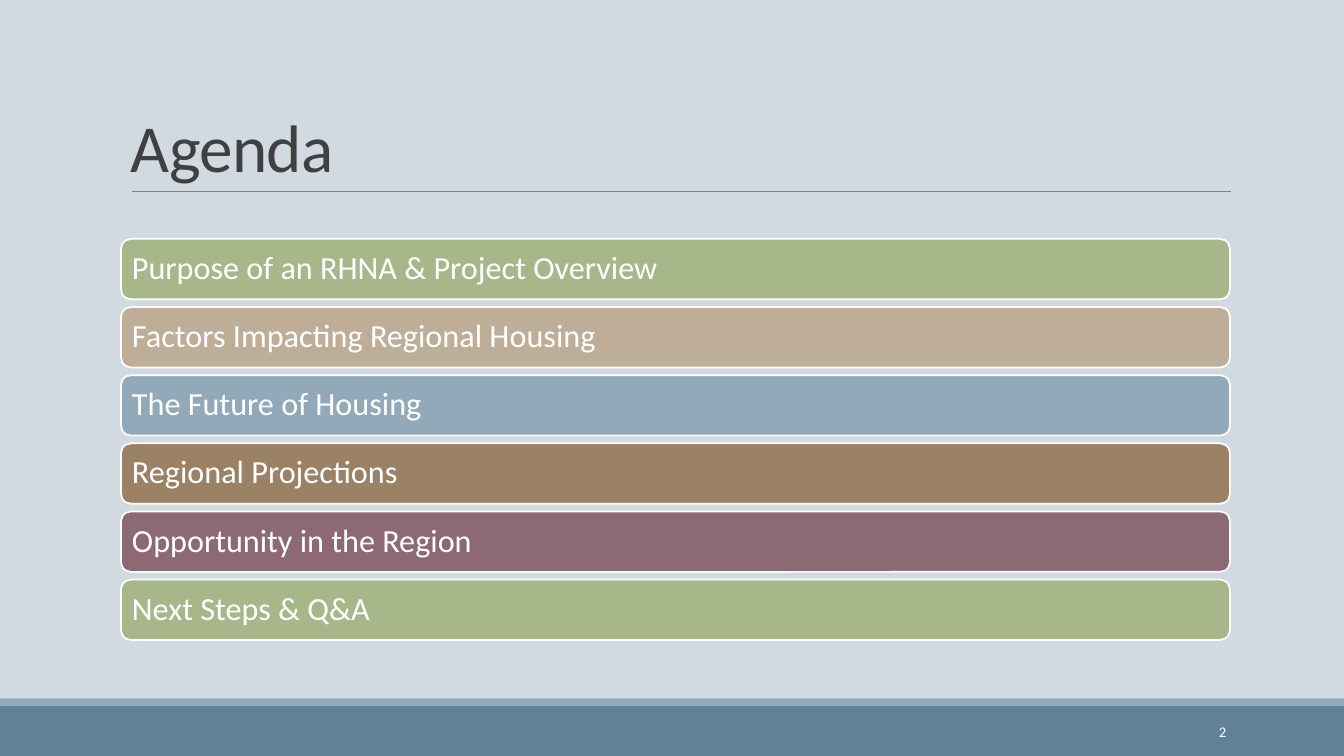
from pptx import Presentation
from pptx.dml.color import RGBColor
from pptx.enum.shapes import MSO_CONNECTOR, MSO_SHAPE
from pptx.enum.text import MSO_ANCHOR, PP_ALIGN
from pptx.oxml.ns import qn
from pptx.util import Inches, Pt
from lxml.etree import SubElement

PALE = RGBColor(0xD1, 0xD9, 0xE1)
SLATE = RGBColor(0x61, 0x81, 0x97)
BLUE = RGBColor(0x92, 0xA9, 0xB9)
GRAY = RGBColor(0x80, 0x80, 0x80)
DARK = RGBColor(0x40, 0x40, 0x40)
WHITE = RGBColor(0xFF, 0xFF, 0xFF)
GREEN = RGBColor(0xA7, 0xB7, 0x89)
SAND = RGBColor(0xBE, 0xAE, 0x98)
BROWN = RGBColor(0x9C, 0x82, 0x65)
PLUM = RGBColor(0x8D, 0x69, 0x74)

WIDTH, HEIGHT = 13.33, 7.5
TOPICS = [
    ("Purpose of an RHNA & Project Overview", GREEN),
    ("Factors Impacting Regional Housing", SAND),
    ("The Future of Housing", BLUE),
    ("Regional Projections", BROWN),
    ("Opportunity in the Region", PLUM),
    ("Next Steps & Q&A", GREEN),
]


def add_block(slide, kind, box, fill):
    block = slide.shapes.add_shape(kind, *map(Inches, box))
    block.shadow.inherit = False
    block.fill.solid()
    block.fill.fore_color.rgb = fill
    block.line.fill.background()
    return block


def set_text(shape, text, size, color, anchor, align=PP_ALIGN.LEFT):
    frame = shape.text_frame
    frame.text = text
    frame.word_wrap = True
    frame.vertical_anchor = anchor
    para = frame.paragraphs[0]
    para.alignment = align
    font = para.runs[0].font
    font.name = "Calibri"
    font.size = Pt(size)
    font.color.rgb = color
    return para


def add_title(slide, box, text):
    left, top, width, height = box
    title = slide.shapes.add_textbox(*map(Inches, box))
    para = set_text(title, text, 48, DARK, MSO_ANCHOR.BOTTOM)
    para.line_spacing = 0.85
    para.runs[0]._r.get_or_add_rPr().set("spc", "-50")
    base = Inches(top + height)
    rule = slide.shapes.add_connector(
        MSO_CONNECTOR.STRAIGHT,
        Inches(left + 0.11), base, Inches(left + width + 0.01), base)
    rule.line.color.rgb = GRAY
    rule.line.width = Pt(0.5)
    SubElement(rule._element.spPr, qn("a:effectLst"))


def add_topics(slide, box, topics):
    left, top, width, height = box
    tall = 0.6
    step = (height - tall) / (len(topics) - 1)
    for row, (text, fill) in enumerate(topics):
        place = (left, top + row * step, width, tall)
        bar = add_block(slide, MSO_SHAPE.ROUNDED_RECTANGLE, place, fill)
        bar.line.color.rgb = WHITE
        bar.line.width = Pt(1.25)
        para = set_text(bar, text, 23, WHITE, MSO_ANCHOR.MIDDLE)
        para.line_spacing = 0.9
        bar.text_frame.margin_left = Inches(0.08)


def add_footer(slide, box, number):
    left, top, width, height = box
    strip = 0.07
    add_block(slide, MSO_SHAPE.RECTANGLE, box, SLATE)
    add_block(slide, MSO_SHAPE.RECTANGLE, (left, top - strip, width, strip), BLUE)
    page = slide.shapes.add_textbox(
        Inches(left + 10.83), Inches(top + 0.06), Inches(1.43), Inches(0.4))
    set_text(page, number, 10.5, WHITE, MSO_ANCHOR.MIDDLE, PP_ALIGN.RIGHT)


def main():
    deck = Presentation()
    deck.slide_width = Inches(WIDTH)
    deck.slide_height = Inches(HEIGHT)
    slide = deck.slides.add_slide(deck.slide_layouts[6])
    slide.background.fill.solid()
    slide.background.fill.fore_color.rgb = PALE
    add_footer(slide, (0, 7, WIDTH, 0.5), "2")
    add_title(slide, (1.2, 0.31, 11, 1.59), "Agenda")
    add_topics(slide, (1.2, 2.37, 11, 3.98), TOPICS)
    deck.save("out.pptx")


if __name__ == "__main__":
    main()
